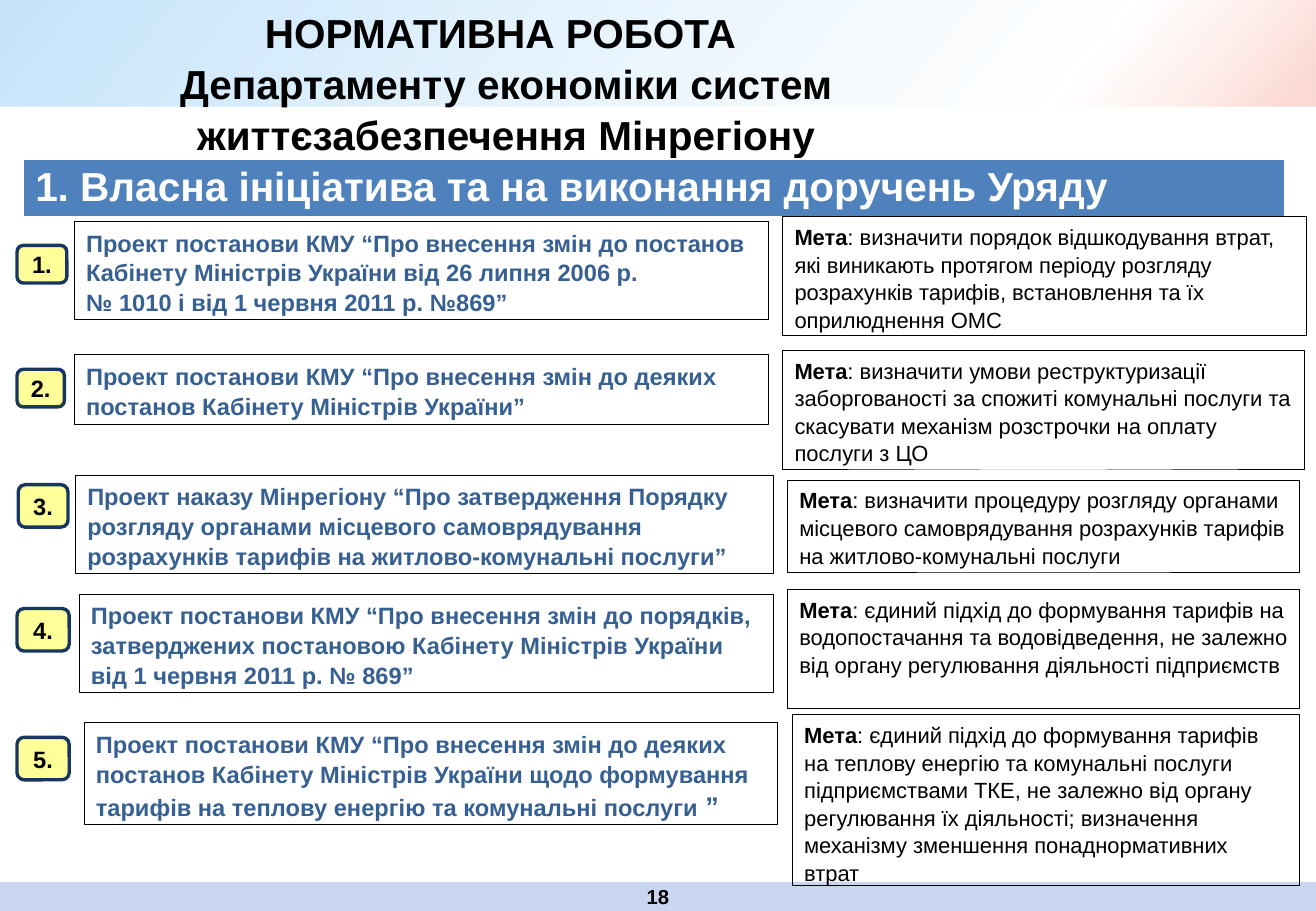
from lxml import etree
from pptx import Presentation
from pptx import util as u
from pptx.dml.color import RGBColor
from pptx.enum import shapes, text
from pptx.oxml import ns

COLOURS = {
    "black": "000000", "white": "FFFFFF", "header": "4F81BD",
    "draft": "376092", "badge": "FFFF99", "badge_line": "17375E",
    "footer": "C8D6F0", "sky": "B4DCFA", "rose": "FCD9D3",
}
BAND_STOPS = [(0, "sky", 79), (81, "white", 62), (98, "rose", 100)]
SHAPES = shapes.MSO_SHAPE
LEFT, CENTRE = text.PP_ALIGN.LEFT, text.PP_ALIGN.CENTER
TOP, MIDDLE = text.MSO_ANCHOR.TOP, text.MSO_ANCHOR.MIDDLE

TITLE = ("НОРМАТИВНА РОБОТА \n"
         "Департаменту економіки систем життєзабезпечення Мінрегіону")
HEADER = "1. Власна ініціатива та на виконання доручень Уряду"

DRAFTS = [
    ((0.14, 2.02, 0.41, 0.31), (0.61, 1.82, 5.71, 0.81), (6.44, 1.78, 4.31, 0.98),
     [("Проект постанови КМУ “Про внесення змін до постанов Кабінету Міністрів "
       "України від 26 липня 2006 р.\v№ 1010 і від 1 червня 2011 р. №869”", 14)],
     "визначити порядок відшкодування втрат, які виникають протягом періоду "
     "розгляду розрахунків тарифів, встановлення та їх оприлюднення ОМС"),
    ((0.14, 3.04, 0.39, 0.31), (0.61, 2.92, 5.71, 0.57), (6.44, 2.88, 4.29, 0.98),
     [("Проект постанови КМУ “Про внесення змін до деяких постанов Кабінету "
       "Міністрів України”", 14)],
     "визначити умови реструктуризації заборгованості за спожиті комунальні "
     "послуги та скасувати механізм розстрочки на оплату послуги з ЦО"),
    ((0.15, 3.99, 0.41, 0.35), (0.62, 3.91, 5.74, 0.81), (6.48, 3.95, 4.21, 0.76),
     [("Проект наказу Мінрегіону “Про затвердження Порядку розгляду органами "
       "місцевого самоврядування розрахунків тарифів на житлово-комунальні "
       "послуги”", 14)],
     "визначити процедуру розгляду органами місцевого самоврядування "
     "розрахунків тарифів на житлово-комунальні послуги"),
    ((0.14, 5.01, 0.43, 0.35), (0.65, 4.89, 5.71, 0.81), (6.48, 4.85, 4.21, 0.98),
     [("Проект постанови КМУ “Про внесення змін до порядків, затверджених "
       "постановою Кабінету Міністрів України від 1 червня 2011 р. № 869”", 14)],
     "єдиний підхід до формування тарифів на водопостачання та водовідведення, "
     "не залежно від органу регулювання діяльності підприємств"),
    ((0.14, 6.07, 0.43, 0.35), (0.69, 5.95, 5.71, 0.84), (6.52, 5.88, 4.17, 1.41),
     [("Проект постанови КМУ “Про внесення змін до деяких постанов Кабінету "
       "Міністрів України щодо формування тарифів на теплову енергію та "
       "комунальні послуги ", 14), ("”", 16)],
     "єдиний підхід до формування тарифів на теплову енергію та комунальні "
     "послуги підприємствами ТКЕ, не залежно від органу регулювання їх "
     "діяльності; визначення механізму зменшення понаднормативних\vвтрат"),
]


def colour(name):
    """Return the named colour."""
    return RGBColor.from_string(COLOURS[name])


def format_span(span, size, shade="black", bold=True):
    """Set the font of one run."""
    span.font.name, span.font.size, span.font.bold = "Arial", u.Pt(size), bold
    span.font.color.rgb = colour(shade)


def set_frame(box, anchor, align, spacing=1.05):
    """Set wrapping, anchor, alignment and line spacing of a box."""
    frame = box.text_frame
    frame.word_wrap = True
    frame.auto_size = text.MSO_AUTO_SIZE.NONE
    frame.vertical_anchor = anchor
    for para in frame.paragraphs:
        para.alignment, para.line_spacing = align, spacing


def add_box(page, kind, place, fill=None, line=None, width=0.25):
    """Add a flat shape with an optional fill and line."""
    box = page.shapes.add_shape(kind, *map(u.Inches, place))
    box.shadow.inherit = False
    if fill:
        box.fill.solid()
        box.fill.fore_color.rgb = colour(fill)
    else:
        box.fill.background()
    if line:
        box.line.color.rgb = colour(line)
        box.line.width = u.Pt(width)
    else:
        box.line.fill.background()
    return box


def add_band(page):
    """Add the gradient band across the top."""
    band = add_box(page, SHAPES.RECTANGLE, (0, 0, 10.83, 0.88))
    band.fill.gradient()
    gradient = band._element.spPr.find(ns.qn("a:gradFill"))
    stops = gradient.find(ns.qn("a:gsLst"))
    for stop in list(stops):
        stops.remove(stop)
    for position, name, opacity in BAND_STOPS:
        stop = etree.SubElement(stops, ns.qn("a:gs"), pos=str(position * 1000))
        shade = etree.SubElement(stop, ns.qn("a:srgbClr"), val=COLOURS[name])
        etree.SubElement(shade, ns.qn("a:alpha"), val=str(opacity * 1000))
    direction = gradient.find(ns.qn("a:lin"))
    direction.set("ang", str(40 * 60000))
    direction.set("scaled", "0")


def add_footer(page):
    """Add the bottom bar with the page number."""
    bar = add_box(page, SHAPES.RECTANGLE, (0, 7.26, 10.83, 0.24), "footer")
    bar.text_frame.text = "18"
    set_frame(bar, MIDDLE, CENTRE, 1)
    format_span(bar.text_frame.paragraphs[0].runs[0], 12)


def set_title(page):
    """Place and format the slide title."""
    title = page.shapes.title
    title.left, title.top = u.Inches(0), u.Inches(0)
    title.width, title.height = u.Inches(8.33), u.Inches(1.31)
    title.text_frame.text = TITLE
    set_frame(title, TOP, CENTRE)
    for para in title.text_frame.paragraphs:
        format_span(para.runs[0], 24)


def add_header(page):
    """Add the one-cell table that heads the list."""
    place = map(u.Inches, (0.19, 1.31, 10.38, 0.41))
    cell = page.shapes.add_table(1, 1, *place).table.cell(0, 0)
    cell.fill.solid()
    cell.fill.fore_color.rgb = colour("header")
    cell.text_frame.text = HEADER
    format_span(cell.text_frame.paragraphs[0].runs[0], 24, "white")


def add_badge(page, number, place):
    """Add the rounded number of a draft."""
    badge = add_box(page, SHAPES.ROUNDED_RECTANGLE, place, "badge", "badge_line", 2)
    badge.text_frame.text = f"{number}."
    set_frame(badge, MIDDLE, CENTRE, 1)
    badge.text_frame.margin_left = badge.text_frame.margin_right = u.Inches(0.05)
    format_span(badge.text_frame.paragraphs[0].runs[0], 14)


def add_framed_text(page, place, pieces):
    """Add an outlined box whose pieces are text, size, colour and bold."""
    box = add_box(page, SHAPES.RECTANGLE, place, line="black")
    para = box.text_frame.paragraphs[0]
    para.text = pieces[0][0]
    for words, *_ in pieces[1:]:
        for index, part in enumerate(words.split("\v")):
            if index:
                para.add_line_break()
            para.add_run().text = part
    set_frame(box, TOP, LEFT)
    first_runs = len(pieces[0][0].split("\v"))
    for index, span in enumerate(para.runs):
        piece = pieces[0] if index < first_runs else pieces[1]
        format_span(span, *piece[1:])


def main():
    """Build the slide and save it."""
    deck = Presentation()
    deck.slide_width, deck.slide_height = u.Inches(10.83), u.Inches(7.5)
    page = deck.slides.add_slide(deck.slide_layouts[5])
    add_band(page)
    add_footer(page)
    title = page.shapes.title._element
    title.getparent().append(title)
    set_title(page)
    add_header(page)
    for number, (badge, left, right, draft, goal) in enumerate(DRAFTS, 1):
        add_badge(page, number, badge)
        add_framed_text(page, left, [(words, size, "draft") for words, size in draft])
        add_framed_text(page, right, [("Мета", 13), (f": {goal}", 13, "black", False)])
    deck.save("out.pptx")


if __name__ == "__main__":
    main()
